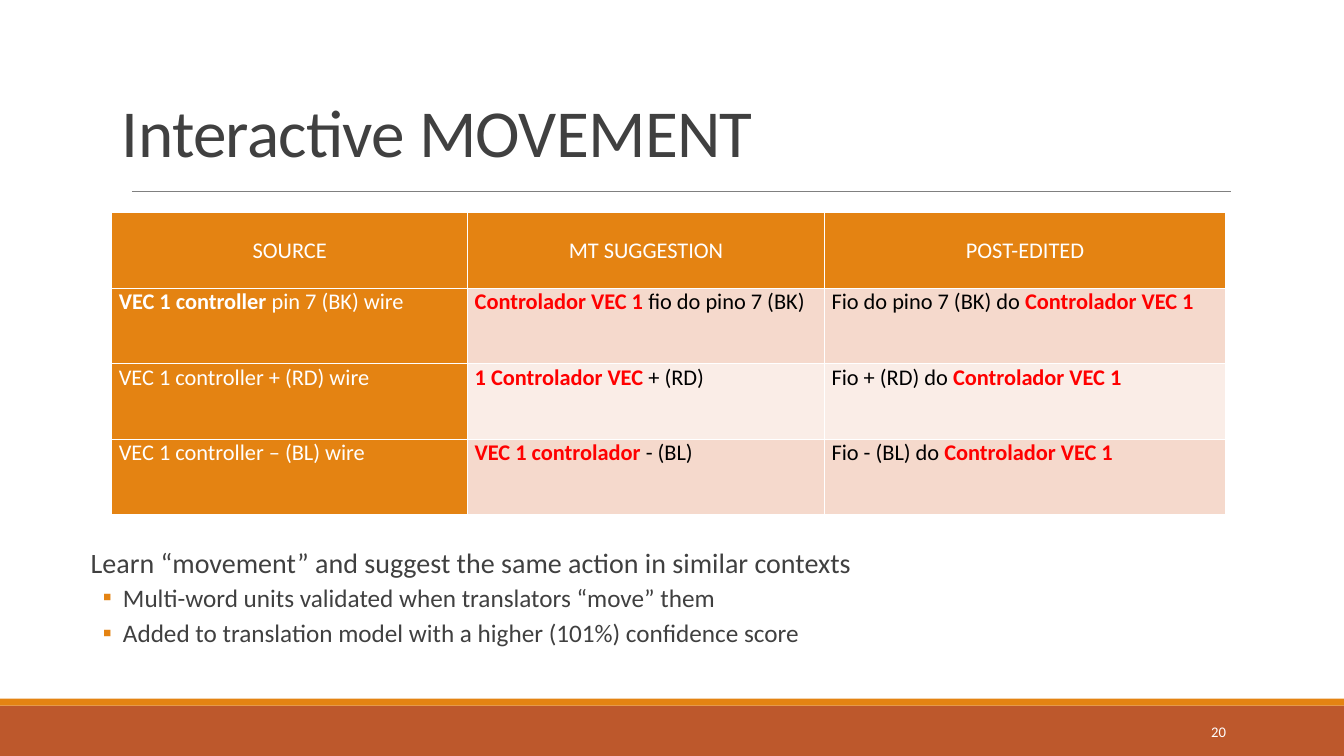
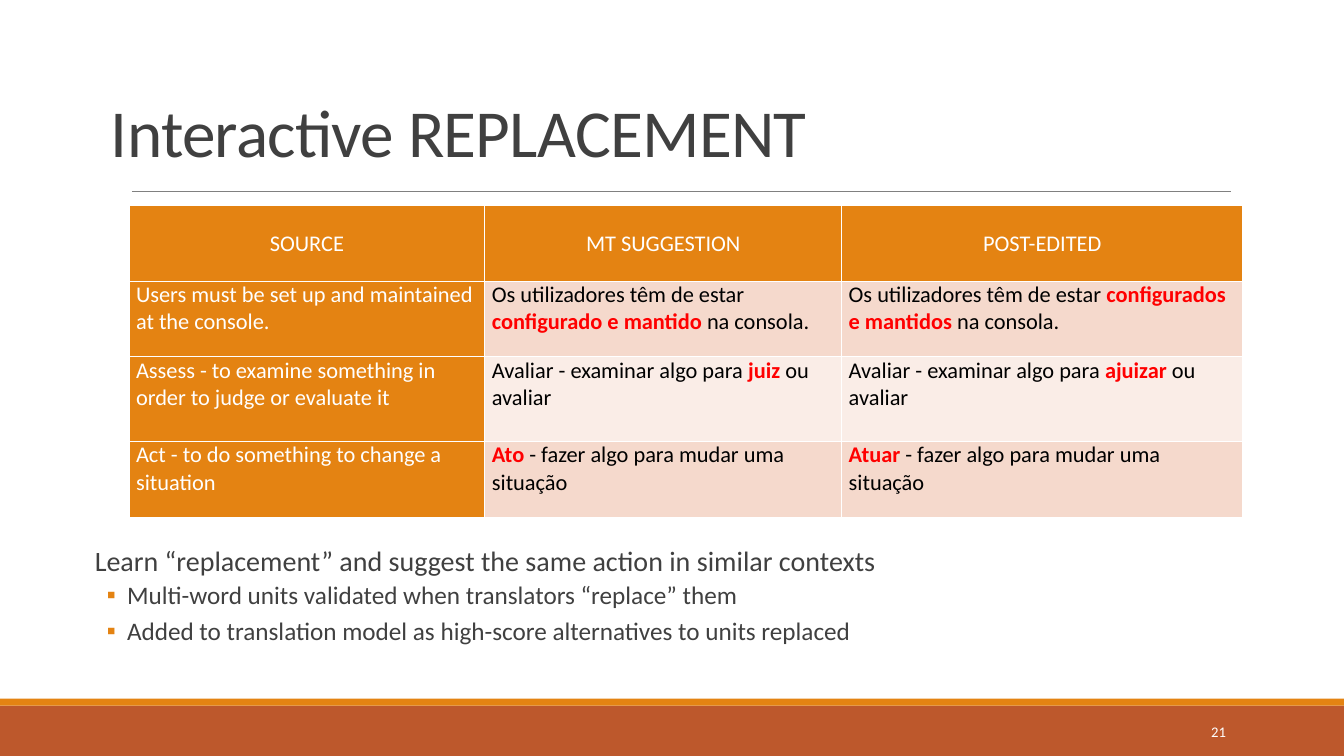
from lxml import etree
from pptx import Presentation
from pptx.dml.color import RGBColor
from pptx.enum.shapes import MSO_CONNECTOR, MSO_SHAPE
from pptx.enum.text import MSO_ANCHOR, MSO_AUTO_SIZE, PP_ALIGN
from pptx.oxml.ns import qn
from pptx.util import Inches, Pt

RECT = MSO_SHAPE.RECTANGLE
STRAIGHT = MSO_CONNECTOR.STRAIGHT
TOP, MIDDLE, BOTTOM = MSO_ANCHOR.TOP, MSO_ANCHOR.MIDDLE, MSO_ANCHOR.BOTTOM
LEFT, CENTER, RIGHT = PP_ALIGN.LEFT, PP_ALIGN.CENTER, PP_ALIGN.RIGHT
NO_FIT = MSO_AUTO_SIZE.NONE

FONT = "Calibri"
ORANGE, RUST, GREY = "E48312", "BD582C", "808080"
INK, BLACK, WHITE, RED = "404040", "000000", "FFFFFF", "FF0000"
BANDS = ("FAEDE7", "F5D9CC")
HEADER = ("SOURCE", "MT SUGGESTION", "POST-EDITED")
COL_WIDTHS = (26.48, 26.55, 29.85)


def rgb(value):
    return RGBColor.from_string(value)


class Deck:
    def __init__(self):
        self.prs = Presentation()
        self.prs.slide_width = Inches(13.33)
        self.prs.slide_height = Inches(7.5)
        self.s = None

    def x(self, cols):
        return round(self.prs.slide_width * cols / 100)

    def y(self, rows):
        return round(self.prs.slide_height * rows / 100)

    def box(self, left, top, width, height):
        return self.x(left), self.y(top), self.x(width), self.y(height)

    def place(self, sp, *area):
        sp.left, sp.top, sp.width, sp.height = self.box(*area)

    def font(self, p, size, color):
        p.font.name, p.font.size = FONT, Pt(size)
        p.font.color.rgb = rgb(color)

    def slide(self, number):
        self.s = self.prs.slides.add_slide(self.prs.slide_layouts[1])
        self.band(93.33, 6.67, RUST)
        self.band(92.4, 0.93, ORANGE)
        self.rule(9.82, 91.58, 25.33)
        self.number(number)

    def band(self, top, height, color):
        sp = self.s.shapes.add_shape(RECT, *self.box(0, top, 100, height))
        sp.shadow.inherit = False
        sp.fill.solid()
        sp.fill.fore_color.rgb = rgb(color)
        sp.line.fill.background()

    def rule(self, start, end, top):
        line = self.s.shapes.add_connector(
            STRAIGHT, self.x(start), self.y(top), self.x(end), self.y(top))
        line.line.color.rgb = rgb(GREY)
        line.line.width = Pt(0.5)
        etree.SubElement(line._element.spPr, qn("a:effectLst"))

    def number(self, value):
        tf = self.s.shapes.add_textbox(*self.box(81.22, 94.13, 10.73, 5.33)).text_frame
        tf.word_wrap = True
        tf.vertical_anchor = MIDDLE
        p = tf.paragraphs[0]
        p.text, p.alignment = str(value), RIGHT
        self.font(p, 10.5, WHITE)

    def title(self, left, text):
        sp = self.s.shapes.title
        self.place(sp, left, 0, 85, 23.33)
        tf = sp.text_frame
        tf.auto_size, tf.vertical_anchor = NO_FIT, BOTTOM
        p = tf.paragraphs[0]
        p.text, p.alignment, p.line_spacing = text, LEFT, 0.85
        self.font(p, 48, INK)
        p.font._element.set("spc", "-50")

    def body(self, left, top, lead, points):
        sp = self.s.placeholders[1]
        self.place(sp, left, top, 89.7, 20)
        tf = sp.text_frame
        tf.auto_size, tf.vertical_anchor = NO_FIT, TOP
        tf.margin_left = tf.margin_right = 0
        for i, text in enumerate((lead, *points)):
            p = tf.add_paragraph() if i else tf.paragraphs[0]
            p.text, p.level, p.line_spacing = text, min(i, 1), 0.9
            p.space_before, p.space_after = Pt(2 if i else 0), Pt(4 if i else 2)
            self.bullet(p, 0.42 if i else 0.1, -0.2 if i else 0, "▪" if i else None)
            self.font(p, 18 if i else 20, INK)

    def bullet(self, p, margin, indent, char):
        pr = p._p.get_or_add_pPr()
        pr.set("marL", str(Inches(margin)))
        pr.set("indent", str(Inches(indent)))
        if char is None:
            etree.SubElement(pr, qn("a:buNone"))
            return
        color = etree.SubElement(pr, qn("a:buClr"))
        etree.SubElement(color, qn("a:srgbClr"), val=ORANGE)
        etree.SubElement(pr, qn("a:buFont"), typeface=FONT)
        etree.SubElement(pr, qn("a:buChar"), char=char)

    def table(self, left, top, heights, rows):
        area = self.box(left, top, sum(COL_WIDTHS), sum(heights))
        table = self.s.shapes.add_table(len(heights), len(COL_WIDTHS), *area).table
        table.first_row = table.horz_banding = False
        for column, width in zip(table.columns, COL_WIDTHS):
            column.width = self.x(width)
        for row, height in zip(table.rows, heights):
            row.height = self.y(height)
        for i, texts in enumerate((HEADER, *rows)):
            for j, text in enumerate(texts):
                self.cell(table.cell(i, j), text, i, j)

    def cell(self, cell, text, i, j):
        solid = i == 0 or j == 0
        cell.fill.solid()
        cell.fill.fore_color.rgb = rgb(ORANGE if solid else BANDS[i % 2])
        cell.margin_left = cell.margin_right = Inches(0.07)
        cell.margin_top = cell.margin_bottom = 0
        cell.vertical_anchor = TOP if i else MIDDLE
        p = cell.text_frame.paragraphs[0]
        p.alignment = LEFT if i else CENTER
        p.font.name, p.font.size = FONT, Pt(16)
        for k, part in enumerate(text.split("*")):
            if part:
                r = p.add_run()
                r.text, r.font.bold = part, k % 2 == 1
                r.font.color.rgb = rgb(WHITE if solid else RED if k % 2 else BLACK)


def main():
    deck = Deck()

    deck.slide(20)
    deck.title(8.32, "Interactive MOVEMENT")
    deck.table(8.32, 28.13, (10, 10, 10, 10), (
        ("*VEC 1 controller* pin 7 (BK) wire",
         "*Controlador VEC 1 *fio do pino 7 (BK)",
         "Fio do pino 7 (BK) do *Controlador VEC 1*"),
        ("VEC 1 controller + (RD) wire",
         "*1 Controlador VEC *+ (RD)",
         "Fio + (RD) do *Controlador VEC 1*"),
        ("VEC 1 controller – (BL) wire",
         "*VEC 1 controlador *- (BL)",
         "Fio - (BL) do *Controlador VEC 1*")))
    deck.body(6, 72, "Learn “movement” and suggest the same action in similar contexts", (
        "Multi-word units validated when translators “move” them",
        "Added to translation model with a higher (101%) confidence score"))

    deck.slide(21)
    deck.title(7.5, "Interactive REPLACEMENT")
    deck.table(9.6, 27.2, (10, 10, 11.2, 10), (
        ("Users must be set up and maintained at the console.",
         "Os utilizadores têm de estar *configurado e mantido *na consola.",
         "Os utilizadores têm de estar *configurados e mantidos *na consola."),
        ("Assess - to examine something in order to judge or evaluate it",
         "Avaliar - examinar algo para *juiz* ou avaliar",
         "Avaliar - examinar algo para *ajuizar* ou avaliar"),
        ("Act - to do something to change a situation",
         "*Ato* - fazer algo para mudar uma situação",
         "*Atuar* - fazer algo para mudar uma situação")))
    deck.body(6.3, 71.73, "Learn “replacement” and suggest the same action in similar contexts", (
        "Multi-word units validated when translators “replace” them",
        "Added to translation model as high-score alternatives to units replaced"))

    deck.prs.save("out.pptx")


if __name__ == "__main__":
    main()
